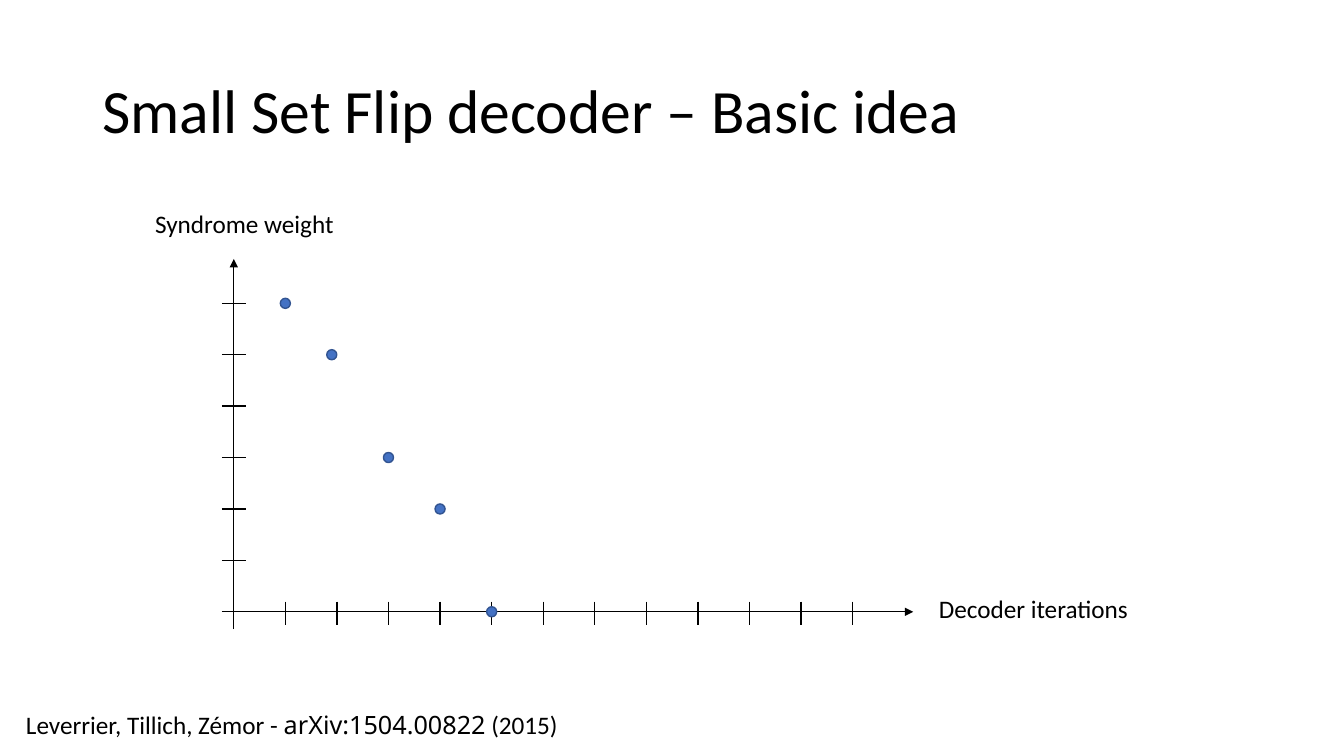
from lxml import etree
from pptx import Presentation
from pptx import util as u
from pptx.dml.color import RGBColor
from pptx.enum import shapes, text
from pptx.oxml.ns import qn

COLORS = {"ink": "000000", "dot": "4472C4", "dot_edge": "325491"}
ORIGIN_X, ORIGIN_Y = 167, 437
STEP_X, STEP_Y = 36.84, 36.72
# (decoder iteration, syndrome weight)
READINGS = [(1, 6), (1.9, 5), (3, 3), (4, 2), (5, 0)]


def color(name):
    return RGBColor.from_string(COLORS[name])


def add_span(para, wording, font="Calibri", size=18, ink="ink"):
    span = para.add_run()
    span.text = wording
    span.font.name = font
    span.font.size = u.Pt(size)
    span.font.color.rgb = color(ink)
    return span


class Sketch:
    """Holds the line style and the page being drawn."""

    def __init__(self, page, line_width=1):
        self.page = page
        self.line_width = u.Pt(line_width)

    def title(self, wording, left, top, width, height):
        box = self.page.shapes.title
        box.left, box.top = u.Pt(left), u.Pt(top)
        box.width, box.height = u.Pt(width), u.Pt(height)
        frame = box.text_frame
        frame.vertical_anchor = text.MSO_ANCHOR.MIDDLE
        frame.auto_size = text.MSO_AUTO_SIZE.NONE
        para = frame.paragraphs[0]
        para.alignment = text.PP_ALIGN.LEFT
        para.line_spacing = 0.9
        add_span(para, wording, size=44)

    def label(self, spans, left, top, width, height=29, wrap=False):
        box = self.page.shapes.add_textbox(
            u.Pt(left), u.Pt(top), u.Pt(width), u.Pt(height))
        box.text_frame.word_wrap = wrap
        box.text_frame.auto_size = text.MSO_AUTO_SIZE.SHAPE_TO_FIT_TEXT
        for wording, font in spans:
            add_span(box.text_frame.paragraphs[0], wording, font=font)

    def line(self, x1, y1, x2, y2, arrow=False):
        line = self.page.shapes.add_connector(
            shapes.MSO_CONNECTOR.STRAIGHT, u.Pt(x1), u.Pt(y1), u.Pt(x2), u.Pt(y2))
        line.line.width = self.line_width
        line.line.color.rgb = color("ink")
        if arrow:
            outline = line.line._get_or_add_ln()
            etree.SubElement(outline, qn("a:tailEnd"), type="triangle")
        etree.SubElement(line._element.spPr, qn("a:effectLst"))

    def dot(self, x, y, size=7.2):
        dot = self.page.shapes.add_shape(
            shapes.MSO_SHAPE.OVAL, u.Pt(x - size / 2), u.Pt(y - size / 2),
            u.Pt(size), u.Pt(size))
        dot.shadow.inherit = False
        dot.fill.solid()
        dot.fill.fore_color.rgb = color("dot")
        dot.line.color.rgb = color("dot_edge")
        dot.line.width = self.line_width


def main():
    deck = Presentation()
    deck.slide_width, deck.slide_height = u.Pt(960), u.Pt(540)
    sketch = Sketch(deck.slides.add_slide(deck.slide_layouts[5]))
    sketch.title("Small Set Flip decoder – Basic idea", 66, 28.75, 828, 104.4)

    # Axes
    sketch.line(158.4, ORIGIN_Y, 652.3, ORIGIN_Y, arrow=True)
    sketch.line(ORIGIN_X, 449.3, ORIGIN_X, 185, arrow=True)

    # Ticks
    for i in range(13):
        x = ORIGIN_X + i * STEP_X
        sketch.line(x, 429.8, x, 446.4)
    for i in range(7):
        y = ORIGIN_Y - i * STEP_Y
        sketch.line(158.4, y, 175.7, y)

    # Axis labels
    sketch.label([("Syndrome weight", "Calibri")], 103.7, 145.6, 143.3)
    sketch.label([("Decoder iterations", "Calibri")], 663.6, 420, 151.2)

    # Readings
    for iteration, weight in READINGS:
        sketch.dot(ORIGIN_X + iteration * STEP_X, ORIGIN_Y - weight * STEP_Y)

    # Reference
    sketch.label([("Leverrier, Tillich, Zémor - ", "Calibri"),
                  ("arXiv:1504.00822", "Noto Sans"),
                  (" (2015)", "Calibri")], 11.5, 503.3, 420.5, wrap=True)

    deck.save("out.pptx")


if __name__ == "__main__":
    main()
